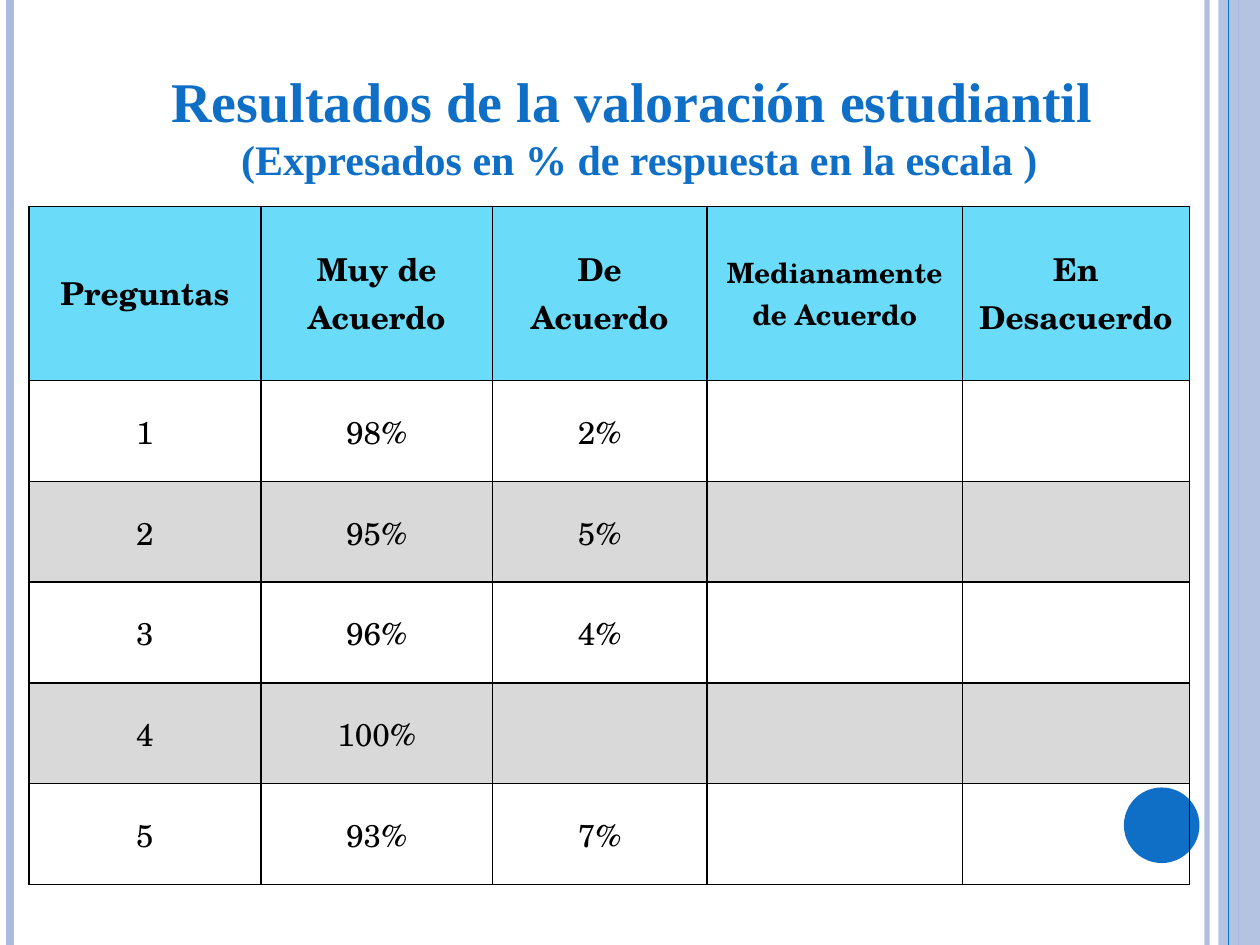
from lxml.etree import SubElement
from pptx import Presentation
from pptx.dml.color import RGBColor
from pptx.enum.shapes import MSO_CONNECTOR, MSO_SHAPE
from pptx.enum.text import MSO_ANCHOR, PP_ALIGN
from pptx.oxml import parse_xml
from pptx.oxml.ns import nsdecls, qn
from pptx.util import Inches, Pt

BLUE, PALE, CYAN, GREY, BLACK = "0F6FC6", "ABBBDF", "6BDBFA", "D9D9D9", "000000"


def set_color(color_format, value, opacity=100):
    color_format.rgb = RGBColor.from_string(value)
    if opacity < 100:
        color = color_format._xFill.find(qn("a:srgbClr"))
        SubElement(color, qn("a:alpha"), val=str(opacity * 1000))


def write(para, text, size, font, color=BLACK, bold=False, spacing=None):
    para.alignment = PP_ALIGN.CENTER
    para.line_spacing = spacing
    span = para.add_run()
    span.text = text
    span.font.size = Pt(size)
    span.font.name = font
    span.font.bold = bold
    set_color(span.font.color, color)


deck = Presentation()
deck.slide_width, deck.slide_height = Inches(10), Inches(7.5)
page = deck.slides.add_slide(deck.slide_layouts[6])

# Side band, vertical rules and the circle behind the table
for kind, left, top, width, height, color, opacity in [
    (MSO_SHAPE.RECTANGLE, 9.67, 0, 0.33, 7.5, PALE, 87),
    (MSO_SHAPE.OVAL, 8.92, 6.25, 0.6, 0.6, BLUE, 100),
]:
    shape = page.shapes.add_shape(
        kind, Inches(left), Inches(top), Inches(width), Inches(height))
    shape.shadow.inherit = False
    shape.fill.solid()
    set_color(shape.fill.fore_color, color, opacity)
    shape.line.fill.background()

for x, color, weight, opacity in [
    (9.58, PALE, 3, 93),
    (0.08, PALE, 4.5, 100),
    (9.83, PALE, 0.75, 100),
    (9.75, BLUE, 0.75, 100),
]:
    rule = page.shapes.add_connector(
        MSO_CONNECTOR.STRAIGHT, Inches(x), 0, Inches(x), deck.slide_height)
    rule.line.width = Pt(weight)
    set_color(rule.line.color, color, opacity)
    SubElement(rule._element.spPr, qn("a:effectLst"))

# Title
box = page.shapes.add_textbox(Inches(1.17), Inches(0.47), Inches(7.81), Inches(1.04))
frame = box.text_frame
frame.word_wrap = True
frame.vertical_anchor = MSO_ANCHOR.BOTTOM
write(frame.paragraphs[0], "Resultados de la valoración estudiantil ",
      size=32, font="Times New Roman", color=BLUE, bold=True)
write(frame.add_paragraph(), "(Expresados en % de respuesta en la escala )",
      size=24, font="Times New Roman", color=BLUE, bold=True)

# Results table
rows = [
    ["Preguntas", "Muy de Acuerdo", "De Acuerdo", "Medianamente de Acuerdo", "En Desacuerdo"],
    ["1", "98%", "2%", "", ""],
    ["2", "95%", "5%", "", ""],
    ["3", "96%", "4%", "", ""],
    ["4", "100%", "", "", ""],
    ["5", "93%", "7%", "", ""],
]
widths = [1.84, 1.84, 1.7, 2.03, 1.8]
heights = [1.38] + [0.8] * 5
table = page.shapes.add_table(
    len(rows), len(widths), Inches(0.23), Inches(1.64),
    Inches(sum(widths)), Inches(sum(heights))).table
for column, width in zip(table.columns, widths):
    column.width = Inches(width)
for row, height in zip(table.rows, heights):
    row.height = Inches(height)

for r, texts in enumerate(rows):
    fill = CYAN if r == 0 else GREY if r % 2 == 0 else None
    for c, text in enumerate(texts):
        cell = table.cell(r, c)
        cell.vertical_anchor = MSO_ANCHOR.MIDDLE
        properties = cell._tc.get_or_add_tcPr()
        for side in ("lnL", "lnR", "lnT", "lnB"):
            properties.append(parse_xml(
                f'<a:{side} {nsdecls("a")} w="12700"><a:solidFill>'
                f'<a:srgbClr val="{BLACK}"/></a:solidFill></a:{side}>'))
        if fill:
            cell.fill.solid()
            set_color(cell.fill.fore_color, fill)
        else:
            cell.fill.background()
        if text:
            size = 16 if text.startswith("Medianamente") else 18
            write(cell.text_frame.paragraphs[0], text, size=size,
                  font="TeX Gyre Schola", bold=r == 0, spacing=Pt(size * 1.52))

deck.save("out.pptx")
